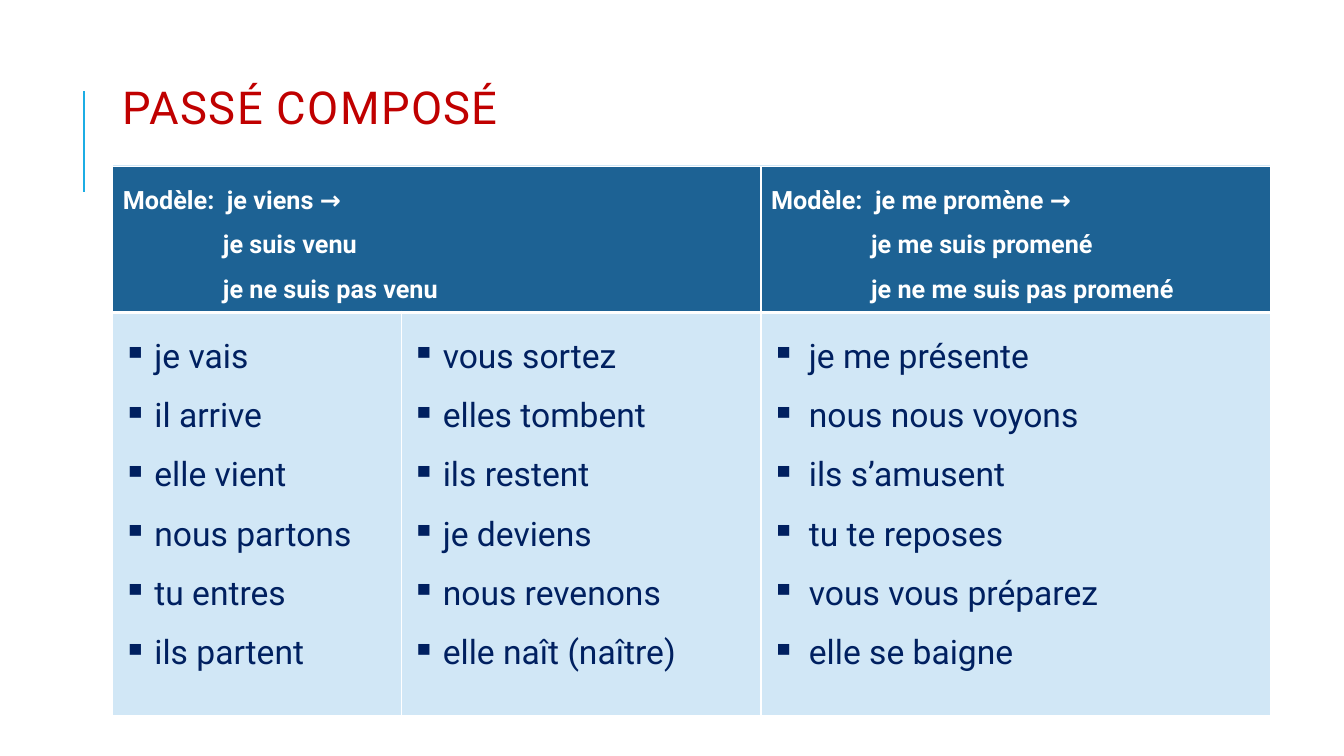
from dataclasses import dataclass

from pptx import Presentation
from pptx.dml.color import RGBColor
from pptx.enum.shapes import MSO_CONNECTOR
from pptx.enum.text import MSO_ANCHOR
from pptx.oxml.xmlchemy import OxmlElement
from pptx.util import Pt


@dataclass(frozen=True)
class Theme:
    font: str = "Roboto"
    title: str = "C00000"
    accent: str = "1CADE4"
    header: str = "1D6294"
    body: str = "D1E7F6"
    verb: str = "002060"
    white: str = "FFFFFF"
    title_size: float = 32.4
    model_size: float = 18
    verb_size: float = 24


THEME = Theme()
TABLE_LEFT = 80.6
COLUMN_WIDTHS = (206, 257, 364.3)
ROW_HEIGHTS = (93, 288)
MODEL_INDENT = 71.5

MODELS = {
    0: ("Modèle:  je viens →", "je suis venu", "je ne suis pas venu"),
    2: ("Modèle:  je me promène →", "je me suis promené", "je ne me suis pas promené"),
}
VERBS = (
    ("je vais", "il arrive", "elle vient", "nous partons", "tu entres", "ils partent"),
    ("vous sortez", "elles tombent", "ils restent", "je deviens", "nous revenons",
     "elle naît (naître)"),
    ("je me présente", "nous nous voyons", "ils s’amusent", "tu te reposes",
     "vous vous préparez", "elle se baigne"),
)
VERB_INDENTS = (22.5, 22.5, 27)


def apply(target, values):
    for name, value in values.items():
        setattr(target, name, value)


def add_child(parent, tag, **attributes):
    child = OxmlElement(tag)
    for name, value in attributes.items():
        child.set(name, str(value))
    parent.append(child)
    return child


def write(paragraph, text, size, color, bold=False):
    run = paragraph.add_run()
    run.text = text
    apply(run.font, {"name": THEME.font, "size": Pt(size), "bold": bold})
    run.font.color.rgb = RGBColor.from_string(color)
    return run


def indent(paragraph, left, bullet=None):
    """Indent a paragraph; a bullet hangs in the indent."""
    properties = paragraph._p.get_or_add_pPr()
    properties.set("marL", str(Pt(left)))
    if bullet:
        properties.set("indent", str(-Pt(left)))
        add_child(properties, "a:buChar", char=bullet)


def write_lines(cell, lines, size, color, bold=False):
    """Fill a cell with one paragraph per line and return the paragraphs."""
    frame = cell.text_frame
    paragraphs = [frame.paragraphs[0]] + [frame.add_paragraph() for _ in lines[1:]]
    for paragraph, line in zip(paragraphs, lines):
        paragraph.line_spacing = 1.5
        write(paragraph, line, size, color, bold)
    return paragraphs


def paint_cell(cell, color, bottom=1):
    properties = cell._tc.get_or_add_tcPr()
    for side, width in {"L": 1, "R": 1, "T": 1, "B": bottom}.items():
        border = add_child(properties, f"a:ln{side}", w=Pt(width))
        add_child(add_child(border, "a:solidFill"), "a:srgbClr", val=THEME.white)
    cell.fill.solid()
    cell.fill.fore_color.rgb = RGBColor.from_string(color)


def add_grid(slide, top, widths, heights):
    grid = slide.shapes.add_table(
        len(heights), len(widths), Pt(TABLE_LEFT), Pt(top), Pt(sum(widths)), Pt(sum(heights))
    ).table
    apply(grid, {"first_row": False, "horz_banding": False})
    for column, width in zip(grid.columns, widths):
        column.width = Pt(width)
    for row, height in zip(grid.rows, heights):
        row.height = Pt(height)
    return grid


def add_title(slide, text):
    title = slide.shapes.add_textbox(Pt(TABLE_LEFT), Pt(20.2), Pt(765.4), Pt(89.3))
    frame = title.text_frame
    apply(frame, {"word_wrap": True, "vertical_anchor": MSO_ANCHOR.MIDDLE,
                  "margin_top": Pt(26), "margin_bottom": Pt(3.6)})
    run = write(frame.paragraphs[0], text, THEME.title_size, THEME.title)
    run.font._element.set("spc", "100")


def add_accent_line(slide):
    accent = slide.shapes.add_connector(
        MSO_CONNECTOR.STRAIGHT, Pt(60), Pt(136.8), Pt(60), Pt(64.8))
    accent.line.width = Pt(1.5)
    accent.line.color.rgb = RGBColor.from_string(THEME.accent)
    add_child(accent._element.spPr, "a:effectLst")


def add_backing(slide):
    """The pale table whose top edge shows above the verb table."""
    backing = add_grid(slide, 117.4, (sum(COLUMN_WIDTHS),), (352,))
    paint_cell(backing.cell(0, 0), THEME.body, bottom=3)


def add_verb_table(slide):
    grid = add_grid(slide, 118.8, COLUMN_WIDTHS, ROW_HEIGHTS)
    grid.cell(0, 0).merge(grid.cell(0, 1))
    for column, (verbs, left) in enumerate(zip(VERBS, VERB_INDENTS)):
        paint_cell(grid.cell(0, column), THEME.header, bottom=3)
        paint_cell(grid.cell(1, column), THEME.body)
        for verb in write_lines(grid.cell(1, column), verbs, THEME.verb_size, THEME.verb):
            indent(verb, left, "▪")
    for column, model in MODELS.items():
        lines = write_lines(grid.cell(0, column), model, THEME.model_size, THEME.white, True)
        for answer in lines[1:]:
            indent(answer, MODEL_INDENT)


def main():
    deck = Presentation()
    apply(deck, {"slide_width": Pt(960), "slide_height": Pt(540)})
    slide = deck.slides.add_slide(deck.slide_layouts[6])
    add_accent_line(slide)
    add_title(slide, "PASSÉ COMPOSÉ")
    add_backing(slide)
    add_verb_table(slide)
    deck.save("out.pptx")


if __name__ == "__main__":
    main()
